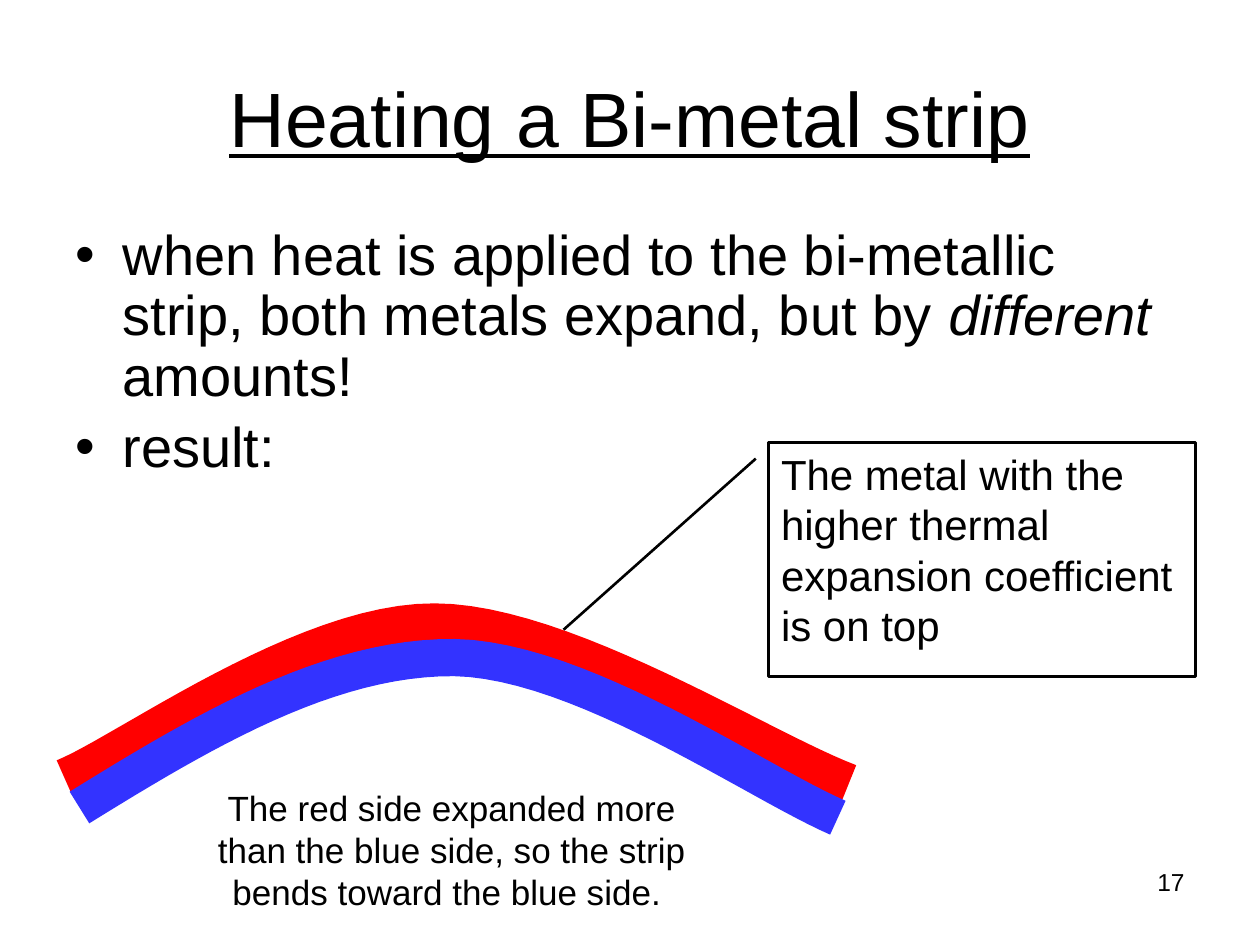
from typing import NamedTuple

from lxml.etree import SubElement
from pptx import Presentation
from pptx.dml.color import RGBColor
from pptx.enum.shapes import MSO_SHAPE
from pptx.enum.text import MSO_ANCHOR, PP_ALIGN
from pptx.oxml.ns import qn
from pptx.util import Pt

BLACK = RGBColor(0, 0, 0)
RED = RGBColor(0xFF, 0, 0)
BLUE = RGBColor(0x33, 0x33, 0xFF)
STEPS = 24


class Run(NamedTuple):
    text: str
    italic: bool = False


class Block(NamedTuple):
    box: tuple[float, float, float, float]
    size: float
    lines: list[list[Run]]
    align: PP_ALIGN = PP_ALIGN.LEFT
    anchor: MSO_ANCHOR = MSO_ANCHOR.TOP
    under: bool = False
    bullet: bool = False


class Strip(NamedTuple):
    color: RGBColor
    knots: list[tuple[float, float]]


TITLE = Block((36, 21.6, 648, 90), 44, [[Run("Heating a Bi-metal strip")]],
              PP_ALIGN.CENTER, MSO_ANCHOR.MIDDLE, under=True)
BODY = Block((36, 126, 648, 167), 32, [
    [Run("when heat is applied to the bi-metallic strip, both metals expand, but by "),
     Run("different", True), Run(" amounts!")],
    [Run("result:")],
], bullet=True)
NOTE = Block((439.2, 252.75, 244.1, 133.9), 24, [
    [Run("The metal with the")],
    [Run("higher thermal")],
    [Run("expansion coefficient is on top")],
])
CAPTION = Block((99.4, 445.7, 317.5, 79.2), 20, [
    [Run("The red side expanded more")],
    [Run("than the blue side, so the strip bends toward the blue side. ")],
], PP_ALIGN.CENTER)
NUMBER = Block((516.2, 491.8, 167.8, 37.4), 14, [[Run("17")]], PP_ALIGN.RIGHT)

STRIPS = [
    Strip(RED, [(36.7, 444.2), (72, 429.8), (173.5, 355), (248.4, 355.4),
                (322.6, 355.6), (435.6, 428.4), (485.3, 447.1)]),
    Strip(BLUE, [(45.4, 461.5), (115.2, 418.3), (187.9, 375.1), (259.9, 375.8),
                 (332.6, 377.3), (433.4, 447.8), (478.8, 467.3)]),
]


def fill_text(shape, block: Block) -> None:
    """Write the lines of a block into a shape."""
    frame = shape.text_frame
    frame.word_wrap = True
    frame.vertical_anchor = block.anchor
    for i, line in enumerate(block.lines):
        para = frame.add_paragraph() if i else frame.paragraphs[0]
        para.alignment = block.align
        if block.bullet:
            para.line_spacing = 0.9
            para.space_before = Pt(block.size * 0.2)
            props = para._p.get_or_add_pPr()
            props.set("marL", str(Pt(27)))
            props.set("indent", str(Pt(-27)))
            SubElement(props, qn("a:buFont")).set("typeface", "Arial")
            SubElement(props, qn("a:buChar")).set("char", "•")
        for part in line:
            run = para.add_run()
            run.text = part.text
            font = run.font
            font.name, font.size = "Arial", Pt(block.size)
            font.color.rgb = BLACK
            font.italic, font.underline = part.italic, block.under


def add_text(slide, block: Block) -> None:
    """Add a text box for a block."""
    fill_text(slide.shapes.add_textbox(*map(Pt, block.box)), block)


def curve(knots: list[tuple[float, float]]) -> list[tuple[int, int]]:
    """Sample a chain of cubic curves."""
    points = [knots[0]]
    for k in range(0, len(knots) - 1, 3):
        for step in range(1, STEPS + 1):
            t = step / STEPS
            u = 1 - t
            weights = (u**3, 3 * u * u * t, 3 * u * t * t, t**3)
            points.append(tuple(sum(w * p[axis] for w, p in zip(weights, knots[k:k + 4]))
                                for axis in (0, 1)))
    return [(Pt(x), Pt(y)) for x, y in points]


def add_strip(slide, strip: Strip) -> None:
    """Draw one metal strip as a thick bent line."""
    start, *rest = curve(strip.knots)
    pen = slide.shapes.build_freeform(*start)
    pen.add_line_segments(rest, close=False)
    shape = pen.convert_to_shape()
    shape.shadow.inherit = False
    shape.fill.background()
    shape.line.color.rgb = strip.color
    shape.line.width = Pt(21.25)


def add_note(slide, block: Block) -> None:
    """Add the callout that points at the top strip."""
    shape = slide.shapes.add_shape(MSO_SHAPE.LINE_CALLOUT_2, *map(Pt, block.box))
    shape.shadow.inherit = False
    shape.fill.background()
    shape.line.color.rgb = BLACK
    shape.line.width = Pt(1.5)
    for i, value in enumerate((0.07, -0.03, 0.07, -0.03, 0.8, -0.48)):
        shape.adjustments[i] = value
    fill_text(shape, block)


def main() -> None:
    """Build the slide and save it."""
    deck = Presentation()
    deck.slide_width, deck.slide_height = Pt(720), Pt(540)
    slide = deck.slides.add_slide(deck.slide_layouts[6])
    add_text(slide, TITLE)
    add_text(slide, BODY)
    for strip in STRIPS:
        add_strip(slide, strip)
    add_note(slide, NOTE)
    add_text(slide, CAPTION)
    add_text(slide, NUMBER)
    deck.save("out.pptx")


if __name__ == "__main__":
    main()
